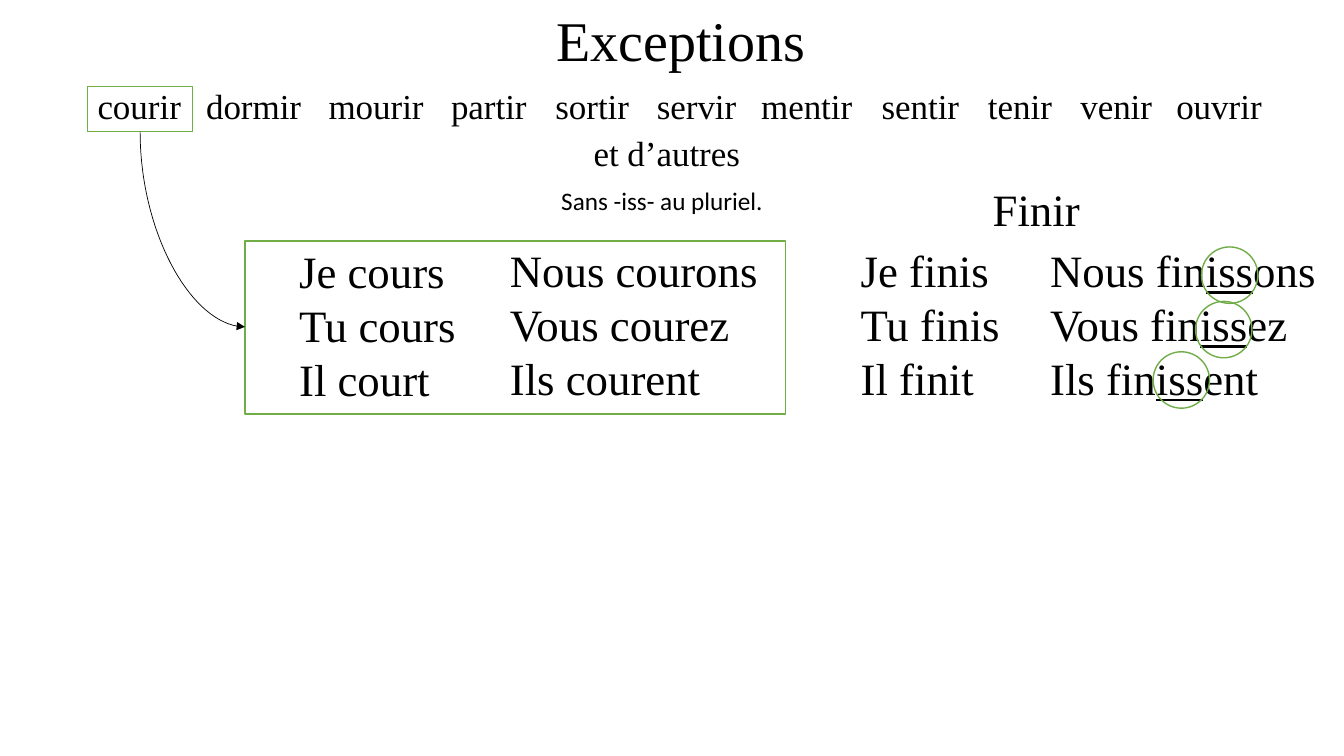
from dataclasses import dataclass

from lxml import etree
from pptx import Presentation
from pptx.dml.color import RGBColor
from pptx.enum.shapes import MSO_CONNECTOR, MSO_SHAPE
from pptx.enum.text import MSO_ANCHOR, MSO_AUTO_SIZE, PP_ALIGN
from pptx.oxml.ns import qn
from pptx.util import Pt

RECTANGLE, OVAL = MSO_SHAPE.RECTANGLE, MSO_SHAPE.OVAL
CURVE = MSO_CONNECTOR.CURVE
CENTER, MIDDLE = PP_ALIGN.CENTER, MSO_ANCHOR.MIDDLE
FIT_SHAPE, NO_FIT = MSO_AUTO_SIZE.SHAPE_TO_FIT_TEXT, MSO_AUTO_SIZE.NONE

SERIF, SANS = "Times New Roman", "Calibri"
BLACK, GREEN = "000000", "70AD47"
UNDERLINE_MARK = "|"
TITLE_ONLY = 5


@dataclass
class Label:
    lines: list[str]
    left: float
    top: float
    width: float
    height: float
    size: float
    font: str = SERIF
    wrap: bool = False


@dataclass
class Outline:
    kind: MSO_SHAPE
    left: float
    top: float
    width: float
    height: float


VERB_TOP, VERB_HEIGHT, VERB_SIZE = 56.5, 37.4, 25
VERB_LEFT, VERB_GAP = 62.6, 2.5
VERB_WIDTHS = {
    "courir": 75, "dormir": 85, "mourir": 85, "partir": 72, "sortir": 70, "servir": 72,
    "mentir": 83.5, "sentir": 73.5, "tenir": 63.5, "venir": 66, "ouvrir": 76.5,
}
FORMS_TOP, FORMS_HEIGHT, FORMS_SIZE = 170, 123.8, 32
CIRCLE = 40.3

LABELS = [
    Label(["et d’autres"], 416.9, 90.7, 121, VERB_HEIGHT, VERB_SIZE),
    Label(["Sans -iss- au pluriel."], 393.8, 128.9, 185.8, 29, 18, SANS, True),
    Label(["Finir"], 702, 126, 77, 46, FORMS_SIZE),
    Label(["Je cours", "Tu cours", "Il court"],
          206.6, FORMS_TOP + 0.7, 127.4, FORMS_HEIGHT, FORMS_SIZE),
    Label(["Nous courons", "Vous courez", "Ils courent"],
          357.1, FORMS_TOP, 193, FORMS_HEIGHT, FORMS_SIZE),
    Label(["Je finis", "Tu finis", "Il finit"],
          607.7, FORMS_TOP, 114.5, FORMS_HEIGHT, FORMS_SIZE),
    Label(["Nous fin|iss|ons", "Vous fin|iss|ez", "Ils fin|iss|ent"],
          743, FORMS_TOP, 206, FORMS_HEIGHT, FORMS_SIZE),
]
OUTLINES = [
    Outline(RECTANGLE, VERB_LEFT, 62, VERB_WIDTHS["courir"], 32),
    Outline(RECTANGLE, 175, 172, 386, 123.8),
    Outline(OVAL, 858.2, 176.4, CIRCLE, CIRCLE),
    Outline(OVAL, 854, 215.3, CIRCLE, CIRCLE),
    Outline(OVAL, 823.7, 251.3, CIRCLE, CIRCLE),
]


def colour(code: str) -> RGBColor:
    return RGBColor.from_string(code)


def format_font(font, name: str, size: float, underline: bool = False) -> None:
    values = {"name": name, "size": Pt(size), "underline": underline}
    for key, value in values.items():
        setattr(font, key, value)
    font.color.rgb = colour(BLACK)


def verb_labels() -> list[Label]:
    """Lay the verbs in one row with equal gaps."""
    labels, left = [], VERB_LEFT
    for verb, width in VERB_WIDTHS.items():
        labels.append(Label([verb], left, VERB_TOP, width, VERB_HEIGHT, VERB_SIZE))
        left += width + VERB_GAP
    return labels


def add_title(page) -> None:
    title = page.shapes.title
    place = {"left": 13, "top": 0, "width": 946.8, "height": 62.6}
    for key, value in place.items():
        setattr(title, key, Pt(value))
    frame = title.text_frame
    frame.text = "Exceptions"
    frame.auto_size = NO_FIT
    frame.vertical_anchor = MIDDLE
    para = frame.paragraphs[0]
    para.alignment = CENTER
    para.line_spacing = 0.9
    format_font(para.runs[0].font, SERIF, 40)


def add_label(page, label: Label) -> None:
    """Add a text box; odd parts between marks are underlined."""
    box = page.shapes.add_textbox(
        Pt(label.left), Pt(label.top), Pt(label.width), Pt(label.height))
    frame = box.text_frame
    frame.word_wrap = label.wrap
    frame.auto_size = FIT_SHAPE
    for index, line in enumerate(label.lines):
        para = frame.add_paragraph() if index else frame.paragraphs[0]
        for part, text in enumerate(line.split(UNDERLINE_MARK)):
            span = para.add_run()
            span.text = text
            format_font(span.font, label.font, label.size, part % 2 == 1)


def add_outline(page, outline: Outline) -> None:
    shape = page.shapes.add_shape(
        outline.kind, Pt(outline.left), Pt(outline.top),
        Pt(outline.width), Pt(outline.height))
    shape.shadow.inherit = False
    shape.fill.background()
    shape.line.color.rgb = colour(GREEN)
    shape.line.width = Pt(1)


def add_curved_arrow(page, start_x: float, start_y: float, end_x: float, end_y: float) -> None:
    """Draw a quarter curve that leaves downwards and arrives from the left."""
    middle_x, middle_y = (start_x + end_x) / 2, (start_y + end_y) / 2
    half_width, half_height = (end_y - start_y) / 2, (end_x - start_x) / 2
    arrow = page.shapes.add_connector(
        CURVE, Pt(middle_x + half_width), Pt(middle_y - half_height),
        Pt(middle_x - half_width), Pt(middle_y + half_height))
    arrow.line.color.rgb = colour(BLACK)
    arrow.line.width = Pt(0.5)
    properties = arrow._element.spPr
    properties.find(qn("a:xfrm")).set("rot", str(270 * 60000))
    properties.find(qn("a:prstGeom")).set("prst", "curvedConnector2")
    etree.SubElement(properties.find(qn("a:ln")), qn("a:tailEnd"), type="triangle")
    etree.SubElement(properties, qn("a:effectLst"))


def main() -> None:
    deck = Presentation()
    deck.slide_width, deck.slide_height = Pt(960), Pt(540)
    page = deck.slides.add_slide(deck.slide_layouts[TITLE_ONLY])
    add_title(page)
    for label in verb_labels() + LABELS:
        add_label(page, label)
    for outline in OUTLINES:
        add_outline(page, outline)
    add_curved_arrow(page, 100.1, 94, 175, 233.5)
    deck.save("out.pptx")


if __name__ == "__main__":
    main()
